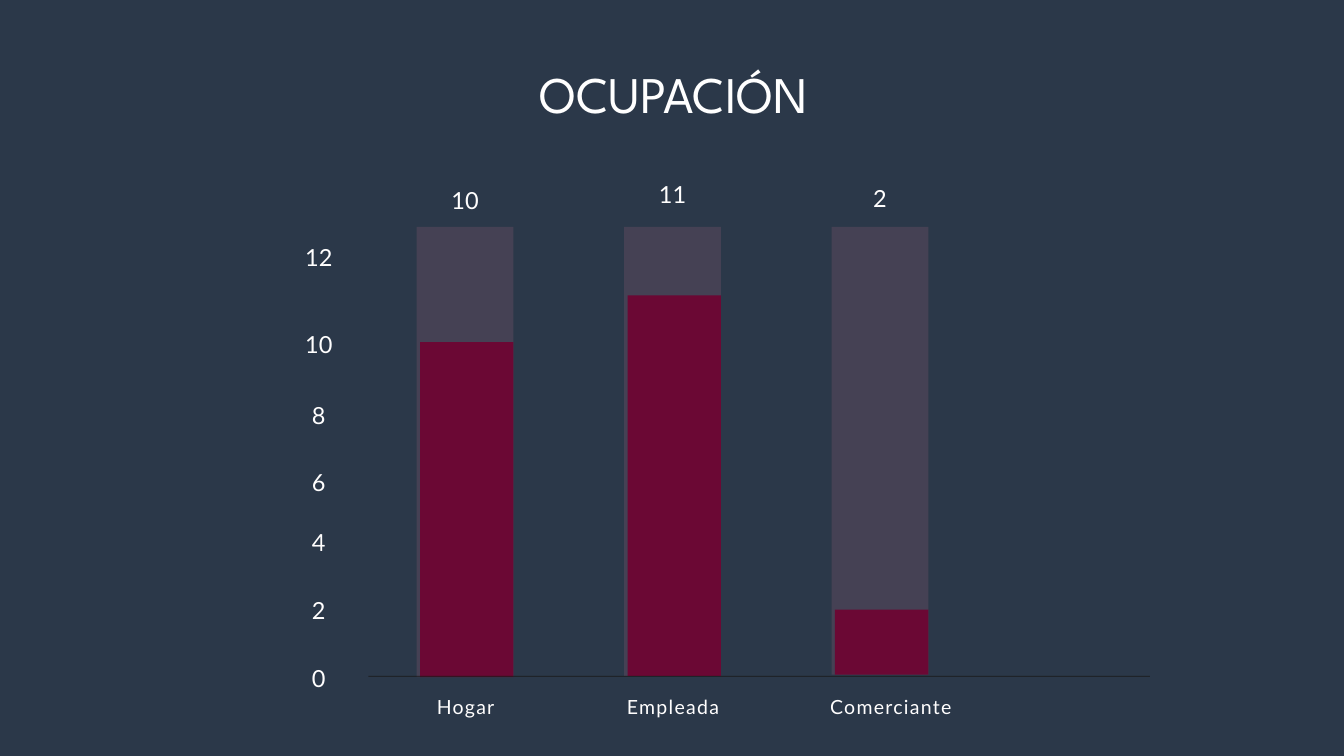
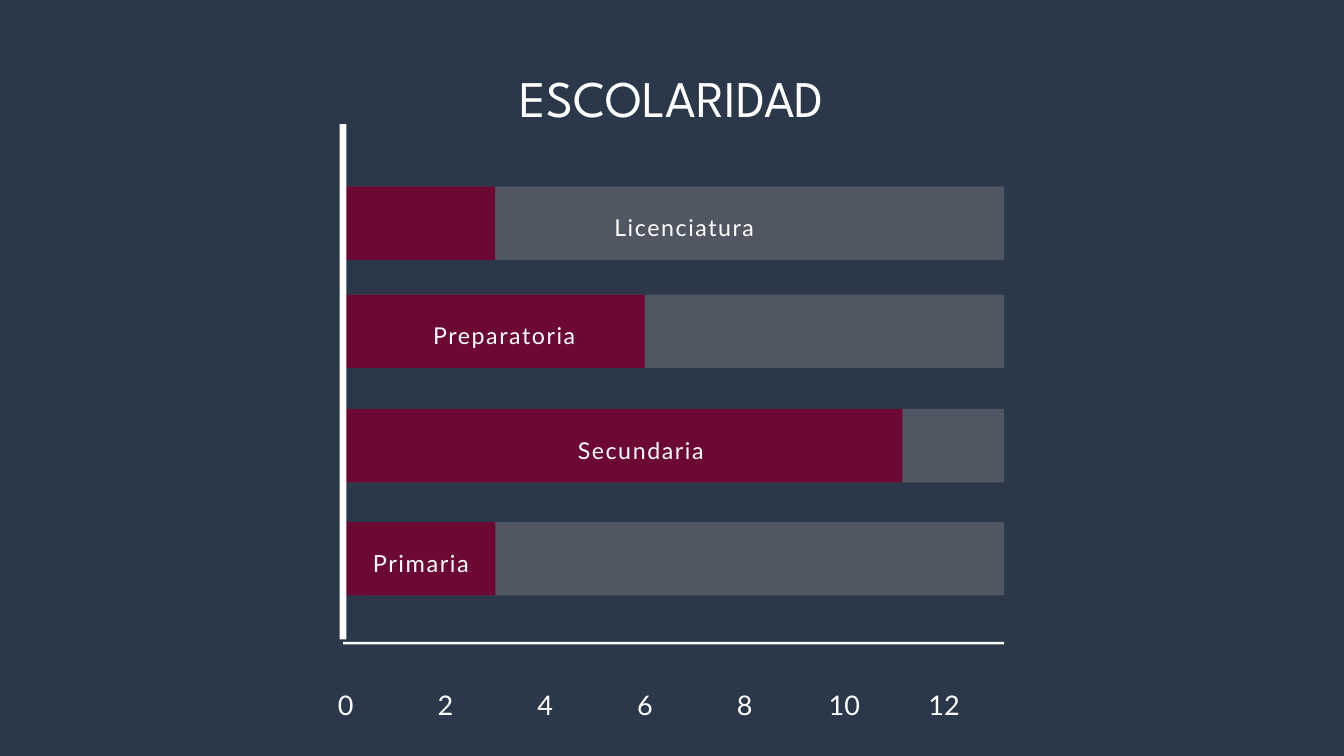
from lxml.etree import SubElement
from pptx import Presentation
from pptx.dml.color import RGBColor
from pptx.enum.shapes import MSO_SHAPE as SHAPE
from pptx.enum.text import MSO_ANCHOR as ANCHOR, MSO_AUTO_SIZE as AUTO, PP_ALIGN as ALIGN
from pptx.oxml.ns import qn
from pptx.util import Cm, Pt

# Shared look
COLORS = {
    "background": "2B3849", "title": "FFFFFF", "text": "FFFEFE",
    "fill": "6B0834", "column track": "9C617B", "row track": "D3BABD",
    "baseline": "191919", "axis": "FFFEFE",
}
TRACK_ALPHA = 23

# Text styles: font, size, colour, letter spacing, line spacing (points)
STYLES = {
    "title": ("League Spartan", 55, "title", 0, 77),
    "category": ("Lato", 20.9, "text", 1.4, 34.9),
    "number": ("Lato", 25.2, "text", 0.2, 38.5),
    "level": ("Lato", 24.8, "title", 1.7, 41.3),
    "first level": ("Lato", 25.2, "title", 1.7, 42.1),
    "scale": ("Lato", 28.9, "text", 0.3, 44.2),
}

# Occupation: name, value, value top, name width, column bottom, fill height (cm)
OCCUPATIONS = [
    ("Hogar", "10", 6.73, 4.98, 25.6, 12.67),
    ("Empleada", "11", 6.53, 4.98, 25.55, 14.38),
    ("Comerciante", "2", 6.65, 5.77, 25.5, 2.46),
]
COUNT_TICKS = [("0", 24.79), ("12", 8.89), ("10", 12.17), ("8", 14.86),
               ("6", 17.4), ("4", 19.66), ("2", 22.23)]

# Schooling: name, style, align, label left, row top, track left, fill right (cm)
LEVELS = [
    ("Licenciatura", "level", ALIGN.LEFT, 23.22, 7.05, 12.97, 18.72),
    ("Preparatoria", "level", ALIGN.CENTER, 12.52, 11.14, 13.27, 24.37),
    ("Secundaria", "level", ALIGN.CENTER, 17.68, 15.46, 12.97, 34.11),
    ("Primaria", "first level", ALIGN.CENTER, 9.37, 19.74, 14.05, 18.73),
]
SCALE = range(0, 13, 2)


def rgb(name):
    return RGBColor.from_string(COLORS[name])


def write(sp, text, style, align=ALIGN.CENTER):
    font, size, color, spacing, leading = STYLES[style]
    tf = sp.text_frame
    tf.text = text
    tf.word_wrap = True
    tf.auto_size = AUTO.SHAPE_TO_FIT_TEXT
    tf.vertical_anchor = ANCHOR.TOP
    tf.margin_left = tf.margin_top = tf.margin_right = tf.margin_bottom = 0
    p = tf.paragraphs[0]
    p.alignment = align
    p.line_spacing = Pt(leading)
    r = p.runs[0]
    r.font.name = font
    r.font.size = Pt(size)
    r.font.color.rgb = rgb(color)
    if spacing:
        r._r.get_or_add_rPr().set("spc", str(round(spacing * 100)))


def add_label(s, text, style, x, y, w, h, align=ALIGN.CENTER):
    write(s.shapes.add_textbox(Cm(x), Cm(y), Cm(w), Cm(h)), text, style, align)


def add_bar(s, color, x, y, w, h, alpha=None):
    sp = s.shapes.add_shape(SHAPE.RECTANGLE, Cm(x), Cm(y), Cm(w), Cm(h))
    sp.shadow.inherit = False
    sp.line.fill.background()
    sp.fill.solid()
    sp.fill.fore_color.rgb = rgb(color)
    if alpha:
        clr = sp._element.spPr.find(".//" + qn("a:srgbClr"))
        SubElement(clr, qn("a:alpha")).set("val", str(alpha * 1000))


def add_slide(prs, title, x, y):
    s = prs.slides.add_slide(prs.slide_layouts[5])
    sp = s.shapes.title
    sp.left, sp.top, sp.width, sp.height = Cm(x), Cm(y), Cm(38.15), Cm(2.57)
    write(sp, title, "title")
    return s


def build_occupation(prs):
    s = add_slide(prs, "OCUPACIÓN", 6.4, 1.98)
    left, pitch, top, track_w, fill_w, num_w = 15.75, 7.84, 8.58, 3.66, 3.53, 1.96

    for text, y in COUNT_TICKS:
        add_label(s, text, "number", 11.07, y, num_w, 1.27)

    # Columns with their values and names
    for i, (name, value, value_y, name_w, bottom, fill_h) in enumerate(OCCUPATIONS):
        x = left + i * pitch
        add_bar(s, "column track", x, top, track_w, bottom - top, TRACK_ALPHA)
        add_bar(s, "fill", x + track_w - fill_w, bottom - fill_h, fill_w, fill_h)
        add_label(s, value, "number", x + (track_w - num_w) / 2, value_y, num_w, 1.27)
        add_label(s, name, "category", x - 0.64, 25.91, name_w, 1.14)

    add_bar(s, "baseline", 13.92, 25.55, 29.54, 0.03)


def build_schooling(prs):
    s = add_slide(prs, "ESCOLARIDAD", 6.32, 2.11)
    zero, right, row_h = 12.97, 37.96, 2.77

    # Rows with their names
    for name, style, align, label_x, y, track_x, fill_right in LEVELS:
        add_bar(s, "row track", track_x, y, right - track_x, row_h, TRACK_ALPHA)
        add_bar(s, "fill", zero, y, fill_right - zero, row_h)
        add_label(s, name, style, label_x, y + 0.61, 13.08, 1.27, align)

    # Axes and scale
    add_bar(s, "axis", 12.84, 4.69, 0.25, 19.48)
    add_bar(s, "axis", zero, 24.26, right - zero, 0.1)
    for i, n in enumerate(SCALE):
        add_label(s, str(n), "scale", 11.91 + i * 3.77, 25.7, 2.31, 1.4)


def main():
    prs = Presentation()
    prs.slide_width, prs.slide_height = Cm(50.8), Cm(28.575)
    bg = prs.slide_master.background.fill
    bg.solid()
    bg.fore_color.rgb = rgb("background")
    build_occupation(prs)
    build_schooling(prs)
    prs.save("out.pptx")


if __name__ == "__main__":
    main()
